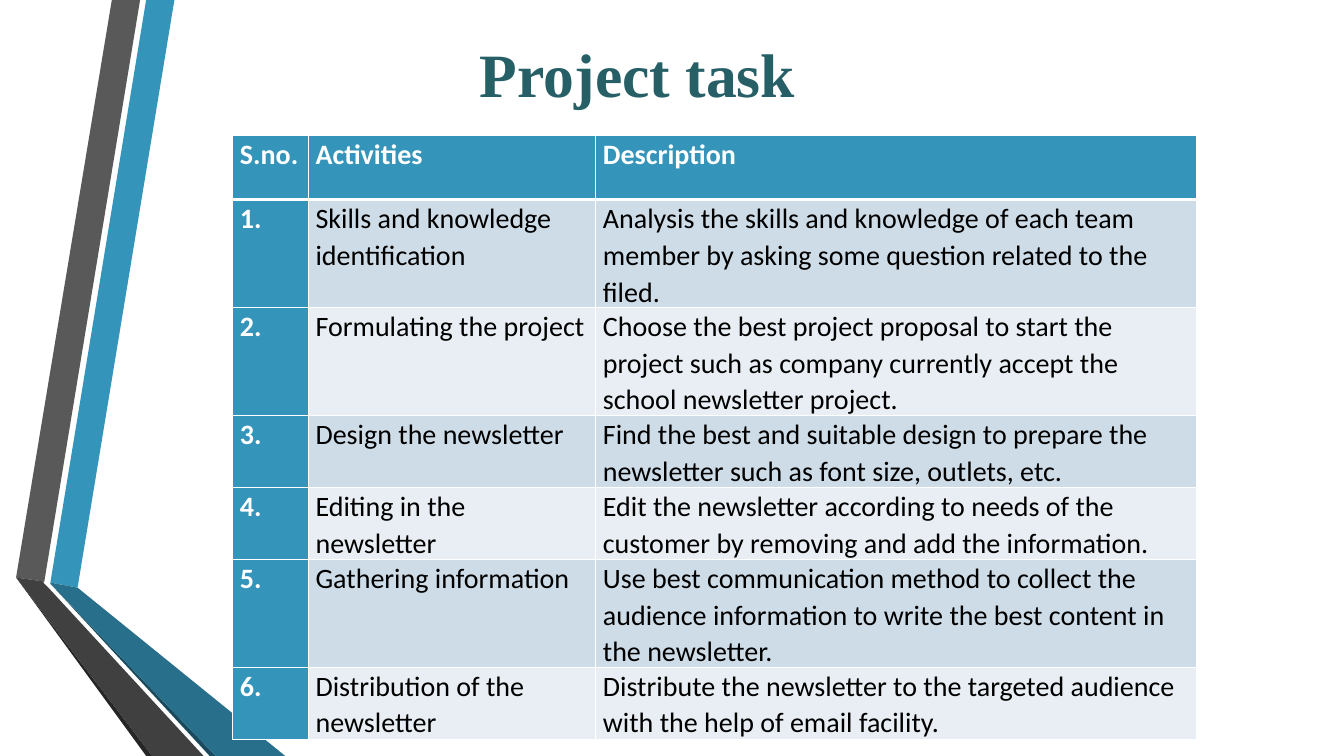
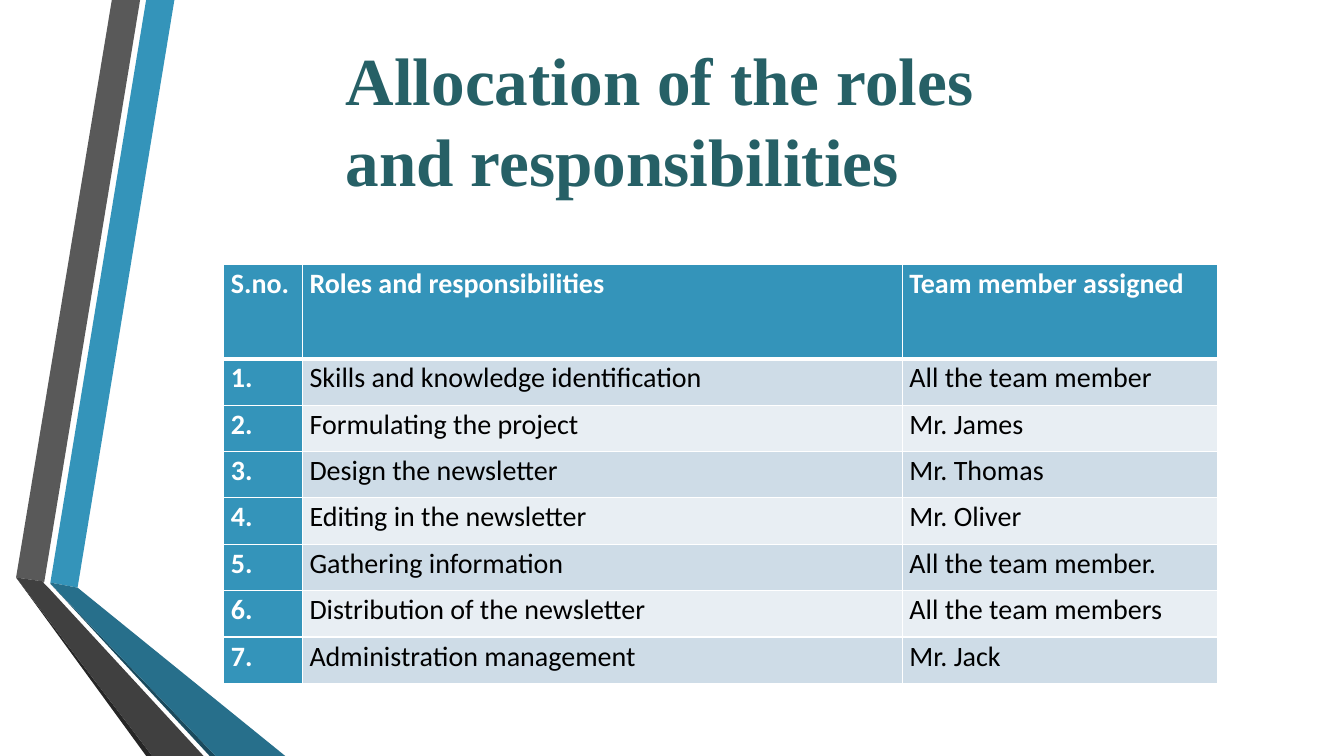
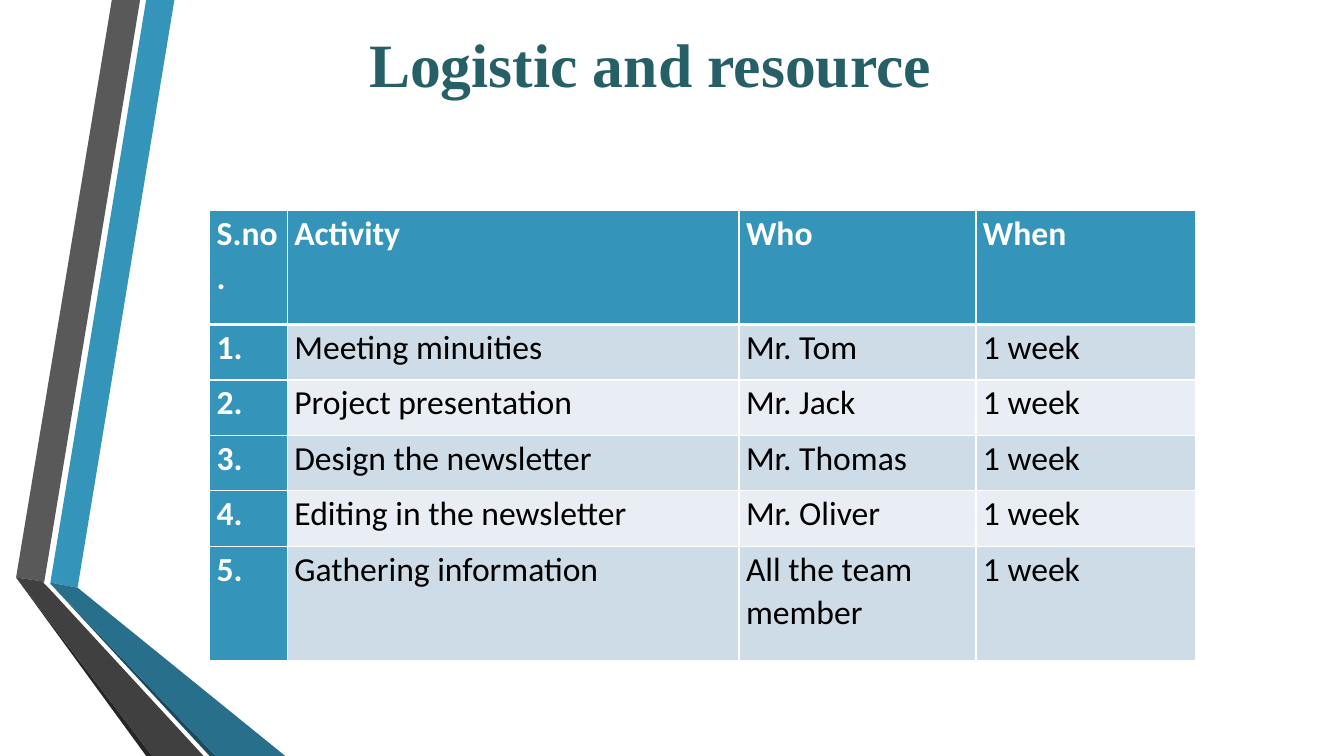
from lxml.etree import SubElement
from pptx import Presentation
from pptx.dml.color import RGBColor
from pptx.enum.text import MSO_ANCHOR, MSO_AUTO_SIZE, PP_ALIGN
from pptx.oxml.ns import qn
from pptx.util import Inches, Pt

BLUE = "3494BA"
TEAL = "266066"
WHITE = "FFFFFF"
BLACK = "000000"
TINTS = ["CEDCE7", "E8EEF3"]

BANDS = [
    (BLUE, [(0.5, 5.78), (0.77, 5.83), (1.73, 0), (1.45, 0)]),
    ("595959", [(1.39, 0), (1.11, 0), (0.16, 5.73), (0.44, 5.77)]),
    ("262626", [(0.16, 5.73), (1.45, 7.5), (1.51, 7.5)]),
    ("1A4A5D", [(0.5, 5.79), (2.08, 7.5), (2.14, 7.5)]),
    ("276F8B", [(0.5, 5.78), (0.5, 5.79), (2.14, 7.5), (2.83, 7.5), (0.77, 5.83)]),
    ("404040", [(2.02, 7.5), (0.48, 5.83), (0.43, 5.78), (0.44, 5.77),
                (0.16, 5.73), (1.51, 7.5)]),
]

TASKS = [
    ["S.no.", "Activities", "Description"],
    ["1.", "Skills and knowledge identification",
     "Analysis the skills and knowledge of each team member by asking some question related to the filed."],
    ["2.", "Formulating the project",
     "Choose the best project proposal to start the project such as company currently accept the school newsletter project."],
    ["3.", "Design the newsletter",
     "Find the best and suitable design to prepare the newsletter such as font size, outlets, etc."],
    ["4.", "Editing in the newsletter",
     "Edit the newsletter according to needs of the customer by removing and add the information."],
    ["5.", "Gathering information",
     "Use best communication method to collect the audience information to write the best content in the newsletter."],
    ["6.", "Distribution of the newsletter",
     "Distribute the newsletter to the targeted audience with the help of email facility."],
]

ROLES = [
    ["S.no.", "Roles and responsibilities", "Team member assigned"],
    ["1.", "Skills and knowledge identification", "All the team member"],
    ["2.", "Formulating the project", "Mr. James"],
    ["3.", "Design the newsletter", "Mr. Thomas"],
    ["4.", "Editing in the newsletter", "Mr. Oliver"],
    ["5.", "Gathering information", "All the team member."],
    ["6.", "Distribution of the newsletter", "All the team members"],
    ["7.", "Administration management", "Mr. Jack"],
]

PLAN = [
    ["S.no.", "Activity", "Who", "When"],
    ["1.", "Meeting minuities", "Mr. Tom", "1 week"],
    ["2.", "Project presentation", "Mr. Jack", "1 week"],
    ["3.", "Design the newsletter", "Mr. Thomas", "1 week"],
    ["4.", "Editing in the newsletter", "Mr. Oliver", "1 week"],
    ["5.", "Gathering information", "All the team member", "1 week"],
]


def paint(part, color):
    part.solid()
    part.fore_color.rgb = RGBColor.from_string(color)


def add_run(para, text, font, size, color, bold):
    run = para.add_run()
    run.text = text
    run.font.name = font
    run.font.size = Pt(size)
    run.font.bold = bold
    run.font.color.rgb = RGBColor.from_string(color)


def add_bands(slide):
    tree = slide.slide_layout.shapes.element
    for num, (color, points) in enumerate(BANDS, 20):
        spots = [(Inches(x), Inches(y)) for x, y in points]
        form = slide.shapes.build_freeform(*spots[0])
        form.add_line_segments(spots[1:], close=True)
        band = form.convert_to_shape()
        band.shadow.inherit = False
        paint(band.fill, color)
        band.line.fill.background()
        band.element.nvSpPr.cNvPr.set("id", str(num))
        tree.append(band.element)


def add_title(slide, box, text, size):
    title = slide.shapes.title
    title.left, title.top, title.width, title.height = map(Inches, box)
    frame = title.text_frame
    frame.word_wrap = True
    frame.auto_size = MSO_AUTO_SIZE.SHAPE_TO_FIT_TEXT
    frame.vertical_anchor = MSO_ANCHOR.TOP
    para = frame.paragraphs[0]
    para.alignment = PP_ALIGN.LEFT
    add_run(para, text, "Times New Roman", size, TEAL, True)


def add_edges(cell, top, base):
    props = cell._tc.get_or_add_tcPr()
    for side, width in (("L", 1), ("R", 1), ("T", top), ("B", base)):
        line = SubElement(props, qn("a:ln" + side), w=str(Pt(width)))
        fill = SubElement(line, qn("a:solidFill"))
        SubElement(fill, qn("a:srgbClr"), val=WHITE)


def fill_cell(cell, text, size, row, col):
    head = row == 0 or col == 0
    add_edges(cell, 3 if row == 1 else 1, 3 if row == 0 else 1)
    paint(cell.fill, BLUE if head else TINTS[(row - 1) % 2])
    cell.margin_left = cell.margin_right = Inches(0.07)
    cell.margin_top = cell.margin_bottom = 0
    para = cell.text_frame.paragraphs[0]
    para.line_spacing = 1.07
    para.space_after = Pt(8)
    add_run(para, text, "Calibri", size, WHITE if head else BLACK, head)


def add_grid(slide, left, top, cols, rows, data, size):
    frame = slide.shapes.add_table(
        len(rows), len(cols), Inches(left), Inches(top),
        Inches(sum(cols)), Inches(sum(rows)))
    table = frame.table
    table.horz_banding = False
    for col, width in zip(table.columns, cols):
        col.width = Inches(width)
    for row, height in zip(table.rows, rows):
        row.height = Inches(height)
    for row, texts in enumerate(data):
        for col, text in enumerate(texts):
            fill_cell(table.cell(row, col), text, size, row, col)


def add_page(deck):
    return deck.slides.add_slide(deck.slide_layouts[5])


def main():
    deck = Presentation()
    deck.slide_width = Inches(13.33)
    deck.slide_height = Inches(7.5)

    slide = add_page(deck)
    add_bands(slide)
    add_title(slide, (4.66, 0.31, 6.67, 0.84), "Project task", 44)
    add_grid(slide, 2.31, 1.34, [0.75, 2.85, 5.96],
             [0.64, 0.64, 0.96, 0.64, 0.64, 0.96, 0.64], TASKS, 20)

    slide = add_page(deck)
    add_title(slide, (3.33, 0.33, 6.67, 1.72),
              "Allocation of the roles and responsibilities", 48)
    add_grid(slide, 2.22, 2.62, [0.78, 5.95, 3.13],
             [0.94] + [0.46] * 7, ROLES, 20)

    slide = add_page(deck)
    add_title(slide, (3.56, 0.21, 6.67, 0.84), "Logistic and resource", 44)
    add_grid(slide, 2.08, 2.09, [0.77, 4.48, 2.35, 2.18],
             [1.13] + [0.55] * 4 + [1.13], PLAN, 24)

    deck.save("out.pptx")


if __name__ == "__main__":
    main()
